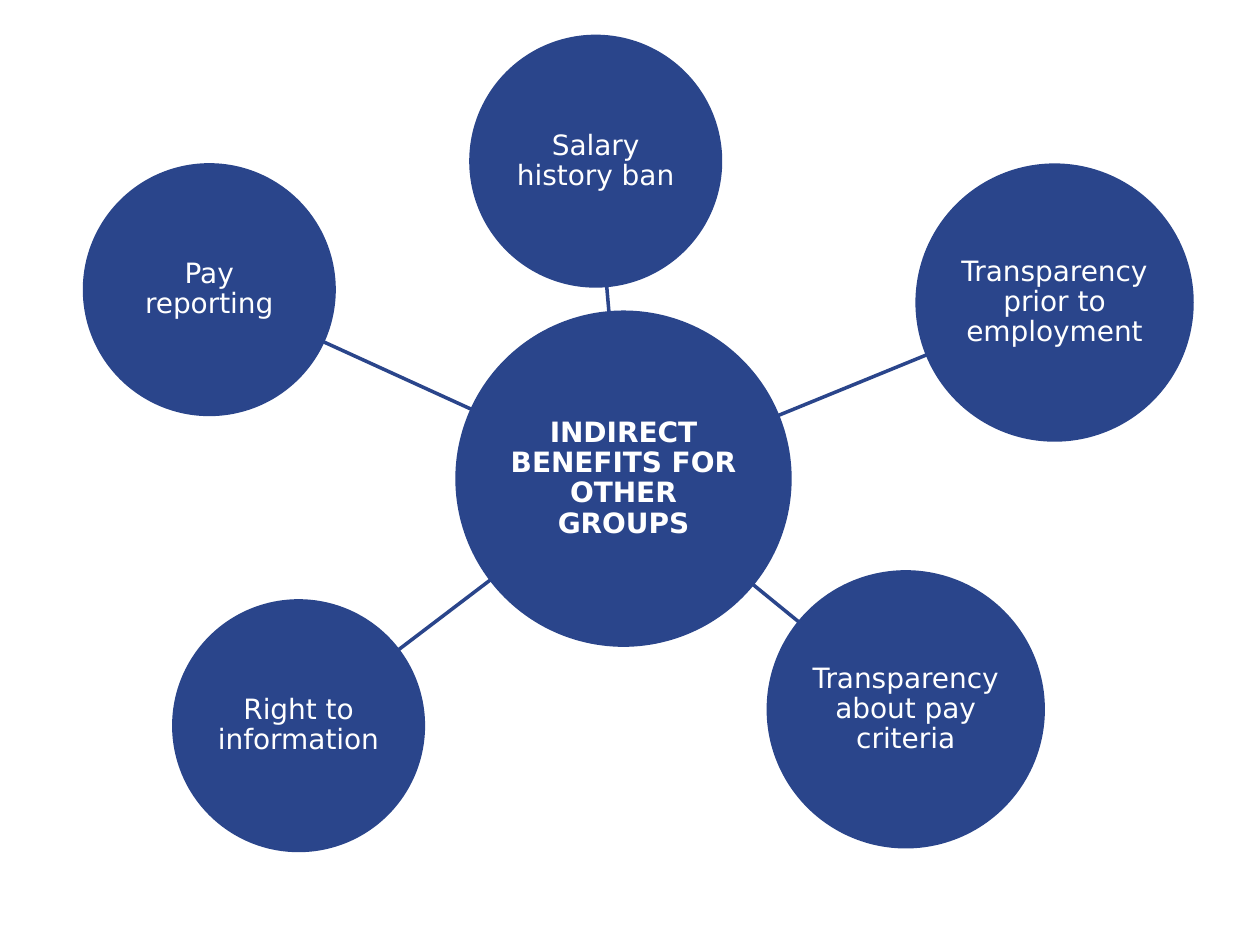
from math import hypot

from lxml import etree
from pptx import Presentation
from pptx.dml.color import RGBColor
from pptx.enum.shapes import MSO_CONNECTOR, MSO_SHAPE
from pptx.enum.text import MSO_ANCHOR, PP_ALIGN
from pptx.oxml.ns import qn
from pptx.util import Cm, Pt

OVAL = MSO_SHAPE.OVAL
STRAIGHT = MSO_CONNECTOR.STRAIGHT
MIDDLE = MSO_ANCHOR.MIDDLE
CENTER = PP_ALIGN.CENTER

BLUE, WHITE = "2A458B", "FFFFFF"
LINE_WIDTH = Pt(2)
FONT = {"name": "DejaVu Sans", "size": Pt(16)}
MARGINS = ("margin_left", "margin_top", "margin_right", "margin_bottom")


def rgb(color):
    return RGBColor.from_string(color)


def add_circle(text, x, y, d, bold=False):
    """Draw a labelled circle centred on (x, y), with diameter d, in cm."""
    s = slide.shapes.add_shape(OVAL, Cm(x - d / 2), Cm(y - d / 2), Cm(d), Cm(d))
    s.shadow.inherit = False
    s.fill.solid()
    s.fill.fore_color.rgb = rgb(BLUE)
    s.line.color.rgb = rgb(BLUE)
    s.line.width = LINE_WIDTH
    tf = s.text_frame
    tf.word_wrap = True
    tf.vertical_anchor = MIDDLE
    for margin in MARGINS:
        setattr(tf, margin, Cm(0.03))
    p = tf.paragraphs[0]
    p.alignment = CENTER
    p.line_spacing = 0.9
    r = p.add_run()
    r.text = text
    for name, value in FONT.items():
        setattr(r.font, name, value)
    r.font.bold = bold
    r.font.color.rgb = rgb(WHITE)


prs = Presentation()
prs.slide_width, prs.slide_height = Cm(25.4), Cm(19.05)
slide = prs.slides.add_slide(prs.slide_layouts[6])

# Centre x, centre y and diameter in cm
hub_x, hub_y, hub_d = 12.57, 9.65, 6.71
topics = [
    ("Transparency prior to employment", 21.26, 6.1, 5.54),
    ("Transparency about pay criteria", 18.26, 14.3, 5.54),
    ("Right to information", 6.02, 14.63, 5.03),
    ("Pay reporting", 4.22, 5.84, 5.03),
    ("Salary history ban", 12.01, 3.25, 5.03),
]

add_circle("INDIRECT BENEFITS FOR OTHER GROUPS", hub_x, hub_y, hub_d, bold=True)

for text, x, y, d in topics:
    # The spoke runs from rim to rim along the line between the centres
    dx, dy = x - hub_x, y - hub_y
    length = hypot(dx, dy)
    start, end = hub_d / 2 / length, 1 - d / 2 / length
    spoke = slide.shapes.add_connector(
        STRAIGHT,
        Cm(hub_x + dx * start), Cm(hub_y + dy * start),
        Cm(hub_x + dx * end), Cm(hub_y + dy * end),
    )
    spoke.line.color.rgb = rgb(BLUE)
    spoke.line.width = LINE_WIDTH
    etree.SubElement(spoke._element.spPr, qn("a:effectLst"))
    add_circle(text, x, y, d)

prs.save("out.pptx")
